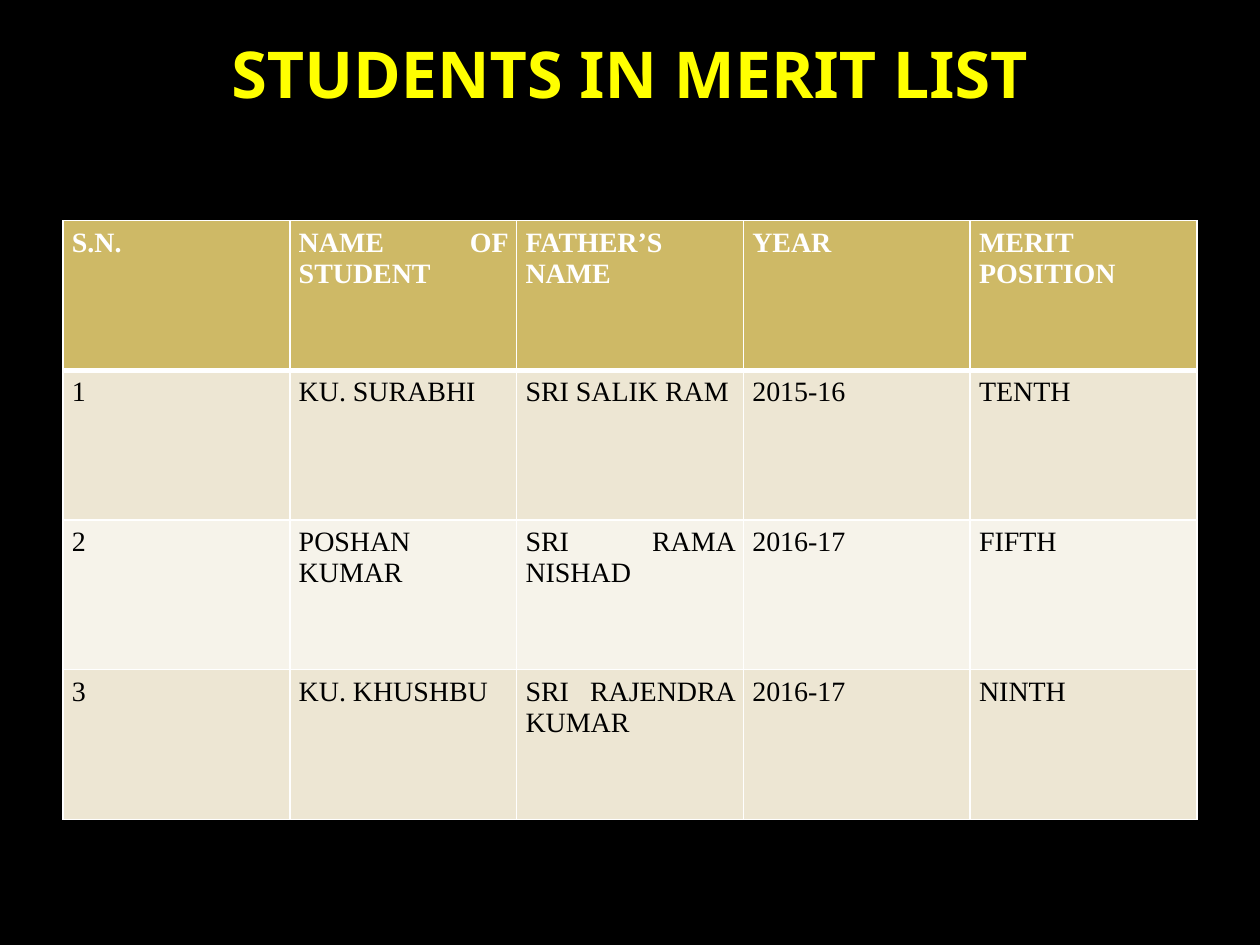
from dataclasses import dataclass

from lxml import etree
from pptx import Presentation
from pptx import util as u
from pptx.dml.color import RGBColor
from pptx.enum import text
from pptx.oxml import ns

MERIT_LIST = [
    ["S.N.", "NAME OF STUDENT", "FATHER’S NAME", "YEAR", "MERIT POSITION"],
    ["1", "KU. SURABHI", "SRI SALIK RAM", "2015-16", "TENTH"],
    ["2", "POSHAN KUMAR", "SRI RAMA NISHAD", "2016-17", "FIFTH"],
    ["3", "KU. KHUSHBU", "SRI RAJENDRA KUMAR", "2016-17", "NINTH"],
]


@dataclass(frozen=True)
class Theme:
    background: str = "000000"
    heading: str = "FFFF00"
    header_text: str = "FFFFFF"
    body_text: str = "000000"
    header_fill: str = "CEB966"
    bands: tuple = ("F6F3EA", "EDE6D3")
    rule: str = "FFFFFF"
    heading_font: str = "Noto Sans"
    table_font: str = "Times New Roman"
    heading_size: float = 36.9
    table_size: float = 16
    thin: float = 1
    thick: float = 3


def assign(target, values):
    for attribute, value in values.items():
        setattr(target, attribute, value)


class MeritSlide:
    def __init__(self, deck, theme):
        self.theme = theme
        self.slide = deck.slides.add_slide(deck.slide_layouts[5])
        backdrop = self.slide.background.fill
        backdrop.solid()
        backdrop.fore_color.rgb = RGBColor.from_string(theme.background)

    def style_text(self, paragraph, align, color, **font):
        paragraph.alignment = align
        face = paragraph.runs[0].font
        assign(face, font)
        face.color.rgb = RGBColor.from_string(color)

    def title(self, wording, left, top, width, height):
        heading = self.slide.shapes.title
        assign(heading, dict(left=u.Cm(left), top=u.Cm(top),
                             width=u.Cm(width), height=u.Cm(height)))
        frame = heading.text_frame
        frame.text = wording
        assign(frame, dict(vertical_anchor=text.MSO_ANCHOR.TOP, margin_top=u.Cm(0.1),
                           auto_size=text.MSO_AUTO_SIZE.NONE, word_wrap=True))
        line = frame.paragraphs[0]
        line.line_spacing = 0.9
        self.style_text(line, text.PP_ALIGN.CENTER, self.theme.heading, bold=True,
                        name=self.theme.heading_font, size=u.Pt(self.theme.heading_size))

    def table(self, records, left, top, width, height):
        grid = self.slide.shapes.add_table(
            len(records), len(records[0]),
            u.Cm(left), u.Cm(top), u.Cm(width), u.Cm(height)).table
        for row, record in enumerate(records):
            for column, wording in enumerate(record):
                self.cell(grid.cell(row, column), wording, row)

    def cell(self, cell, wording, row):
        theme, is_header = self.theme, row == 0
        cell.text = wording
        assign(cell, dict(margin_left=u.Cm(0.18), margin_right=u.Cm(0.18),
                          margin_top=u.Cm(0.13), margin_bottom=u.Cm(0.13)))
        self.style_text(cell.text_frame.paragraphs[0], text.PP_ALIGN.JUSTIFY,
                        theme.header_text if is_header else theme.body_text,
                        bold=is_header, name=theme.table_font, size=u.Pt(theme.table_size))
        self.borders(cell, top=theme.thick if row == 1 else theme.thin,
                     bottom=theme.thick if is_header else theme.thin)
        cell.fill.solid()
        cell.fill.fore_color.rgb = RGBColor.from_string(
            theme.header_fill if is_header else theme.bands[row % 2])

    def borders(self, cell, top, bottom):
        """Rule all four sides; call before filling, as the schema puts lines first."""
        properties = cell._tc.get_or_add_tcPr()
        widths = {"L": self.theme.thin, "R": self.theme.thin, "T": top, "B": bottom}
        for side, width in widths.items():
            line = etree.SubElement(properties, ns.qn(f"a:ln{side}"), w=str(u.Pt(width)))
            paint = etree.SubElement(line, ns.qn("a:solidFill"))
            etree.SubElement(paint, ns.qn("a:srgbClr"), val=self.theme.rule)


def main():
    deck = Presentation()
    assign(deck, dict(slide_width=u.Cm(25.4), slide_height=u.Cm(19.05)))
    merit = MeritSlide(deck, Theme())
    merit.title("STUDENTS IN MERIT LIST", 1.27, 0.76, 22.86, 3.18)
    merit.table(MERIT_LIST, 1.27, 4.45, 22.86, 12.07)
    deck.save("out.pptx")


if __name__ == "__main__":
    main()
